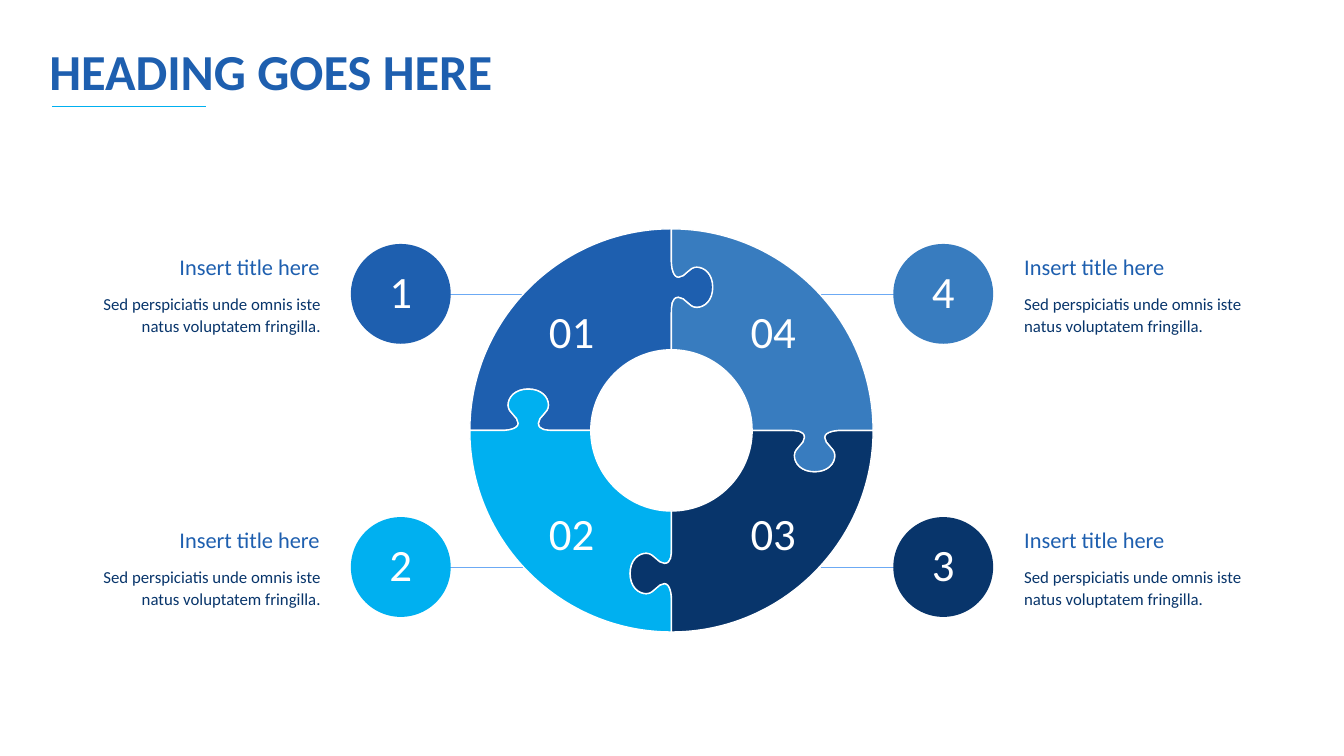
from typing import NamedTuple

from lxml import etree
from pptx import Presentation
from pptx.dml.color import RGBColor
from pptx.enum.shapes import MSO_CONNECTOR, MSO_SHAPE
from pptx.enum.text import MSO_AUTO_SIZE, PP_ALIGN
from pptx.oxml.ns import qn
from pptx.util import Inches, Pt

LEFT, CENTER, RIGHT = PP_ALIGN.LEFT, PP_ALIGN.CENTER, PP_ALIGN.RIGHT
STRAIGHT, ELLIPSE = MSO_CONNECTOR.STRAIGHT, MSO_SHAPE.OVAL
FIT_TEXT = MSO_AUTO_SIZE.SHAPE_TO_FIT_TEXT

FONT = "Calibri"
BLUE, CYAN, NAVY, STEEL = "1E5FAF", "00B0F0", "08356B", "387CBF"
WHITE, LINK_BLUE = "FFFFFF", "6CAAF4"

TITLE = "Insert title here"
DETAIL = "Sed perspiciatis unde omnis iste natus voluptatem fringilla."

Point = tuple[float, float]

# Ring geometry, in inches
HUB: Point = (6.66, 4.27)
OUTER, INNER = 2.0, 0.8
ARC_HANDLE = 0.55  # Bezier handle of a quarter circle, as a share of its radius

# Seam above the hub as (sideways, outward): a start, then three points a curve
SEAM: list[Point] = [
    (0, OUTER),
    (0, 1.87), (0, 1.74), (0, 1.67),
    (0, 1.64), (0.01, 1.52), (0.07, 1.52),
    (0.14, 1.52), (0.17, 1.62), (0.25, 1.62),
    (0.33, 1.62), (0.41, 1.55), (0.41, 1.42),
    (0.41, 1.29), (0.33, 1.22), (0.25, 1.22),
    (0.17, 1.22), (0.14, 1.32), (0.07, 1.32),
    (0, 1.32), (0, 1.23), (0, 1.17),
    (0, 1.05), (0, 0.92), (0, INNER),
]


class Step(NamedTuple):
    """One ring quarter with its callout, counter-clockwise from the top left."""
    number: int
    color: str
    on_left: bool
    on_top: bool


STEPS = [
    Step(1, BLUE, True, True),
    Step(2, CYAN, True, False),
    Step(3, NAVY, False, False),
    Step(4, STEEL, False, True),
]

deck = Presentation()
deck.slide_width, deck.slide_height = Inches(13.33), Inches(7.5)
slide = deck.slides.add_slide(deck.slide_layouts[6])


def rgb(color: str) -> RGBColor:
    return RGBColor.from_string(color)


def add_text(text: str, left: float, top: float, width: float, height: float, *,
             size: float, color: str, bold: bool = False, align: PP_ALIGN = LEFT,
             wrap: bool = False, spacing: float = 1.0) -> None:
    box = slide.shapes.add_textbox(Inches(left), Inches(top), Inches(width), Inches(height))
    frame = box.text_frame
    frame.word_wrap = wrap
    frame.auto_size = FIT_TEXT
    paragraph = frame.paragraphs[0]
    paragraph.alignment = align
    paragraph.line_spacing = spacing
    run = paragraph.add_run()
    run.text = text
    run.font.name, run.font.size, run.font.bold = FONT, Pt(size), bold
    run.font.color.rgb = rgb(color)


def add_rule(start: float, end: float, y: float, color: str, weight: float) -> None:
    rule = slide.shapes.add_connector(STRAIGHT, Inches(start), Inches(y), Inches(end), Inches(y))
    rule.line.color.rgb = rgb(color)
    rule.line.width = Pt(weight)
    etree.SubElement(rule._element.spPr, qn("a:effectLst"))


def quarter_turns(points: list[Point], turns: int) -> list[Point]:
    """Turn points about the hub, counter-clockwise by 90 degrees each time."""
    for _ in range(turns):
        points = [(y, -x) for x, y in points]
    return points


def arc_handles(radius: float) -> list[Point]:
    """Bezier handles of a rim from its top to its left."""
    handle = ARC_HANDLE * radius
    return [(-handle, -radius), (-radius, -handle)]


def add_quarter(turns: int, color: str) -> None:
    seam = [(sideways, -outward) for sideways, outward in SEAM]
    outline = (seam + arc_handles(INNER) + quarter_turns(seam, 1)[::-1]
               + arc_handles(OUTER)[::-1] + seam[:1])
    corners = [(Inches(HUB[0] + x), Inches(HUB[1] + y))
               for x, y in quarter_turns(outline, turns)]
    builder = slide.shapes.build_freeform(*corners[0])
    builder.add_line_segments(corners[1:], close=True)
    quarter = builder.convert_to_shape()
    # Join each three straight segments into one cubic curve
    segments = list(quarter._element.iter(qn("a:lnTo")))
    for i in range(0, len(segments), 3):
        curve = etree.Element(qn("a:cubicBezTo"))
        segments[i].addprevious(curve)
        for segment in segments[i:i + 3]:
            curve.append(segment[0])
            segment.getparent().remove(segment)
    quarter.shadow.inherit = False
    quarter.fill.solid()
    quarter.fill.fore_color.rgb = rgb(color)
    quarter.line.color.rgb = rgb(WHITE)
    quarter.line.width = Pt(1)


def add_callout(step: Step) -> None:
    top = 2.42 if step.on_top else 5.13
    badge_left = 3.48 if step.on_left else 8.86
    link_left = 4.18 if step.on_left else 8.14
    align = RIGHT if step.on_left else LEFT
    add_rule(link_left, link_left + 1.01, top + 0.5, LINK_BLUE, 1)
    badge = slide.shapes.add_shape(ELLIPSE, Inches(badge_left), Inches(top),
                                   Inches(0.99), Inches(0.99))
    badge.shadow.inherit = False
    badge.fill.solid()
    badge.fill.fore_color.rgb = rgb(step.color)
    badge.line.fill.background()
    add_text(str(step.number), badge_left + 0.28, top + 0.15, 0.43, 0.64,
             size=32, color=WHITE, align=CENTER)
    add_text(TITLE, 1.66 if step.on_left else 10.06, top + 0.04, 1.61, 0.37,
             size=16, color=BLUE, align=align)
    add_text(DETAIL, 0.68 if step.on_left else 10.06, top + 0.42, 2.6, 0.55,
             size=12, color=NAVY, align=align, wrap=True, spacing=1.1)


# Heading
add_text("HEADING GOES HERE", 0.39, 0.35, 12.48, 0.71,
         size=36, color=BLUE, bold=True, wrap=True)
add_rule(0.52, 2.04, 1.06, CYAN, 0.5)

# Callouts, under the ring so that it covers the link ends
for step in STEPS:
    add_callout(step)

# Puzzle ring
for turns, step in enumerate(STEPS):
    add_quarter(turns, step.color)

# Ring numbers
for step in STEPS:
    add_text(f"{step.number:02}", 5.34 if step.on_left else 7.34,
             2.96 if step.on_top else 4.97, 0.66, 0.64,
             size=32, color=WHITE, align=CENTER)

deck.save("out.pptx")
